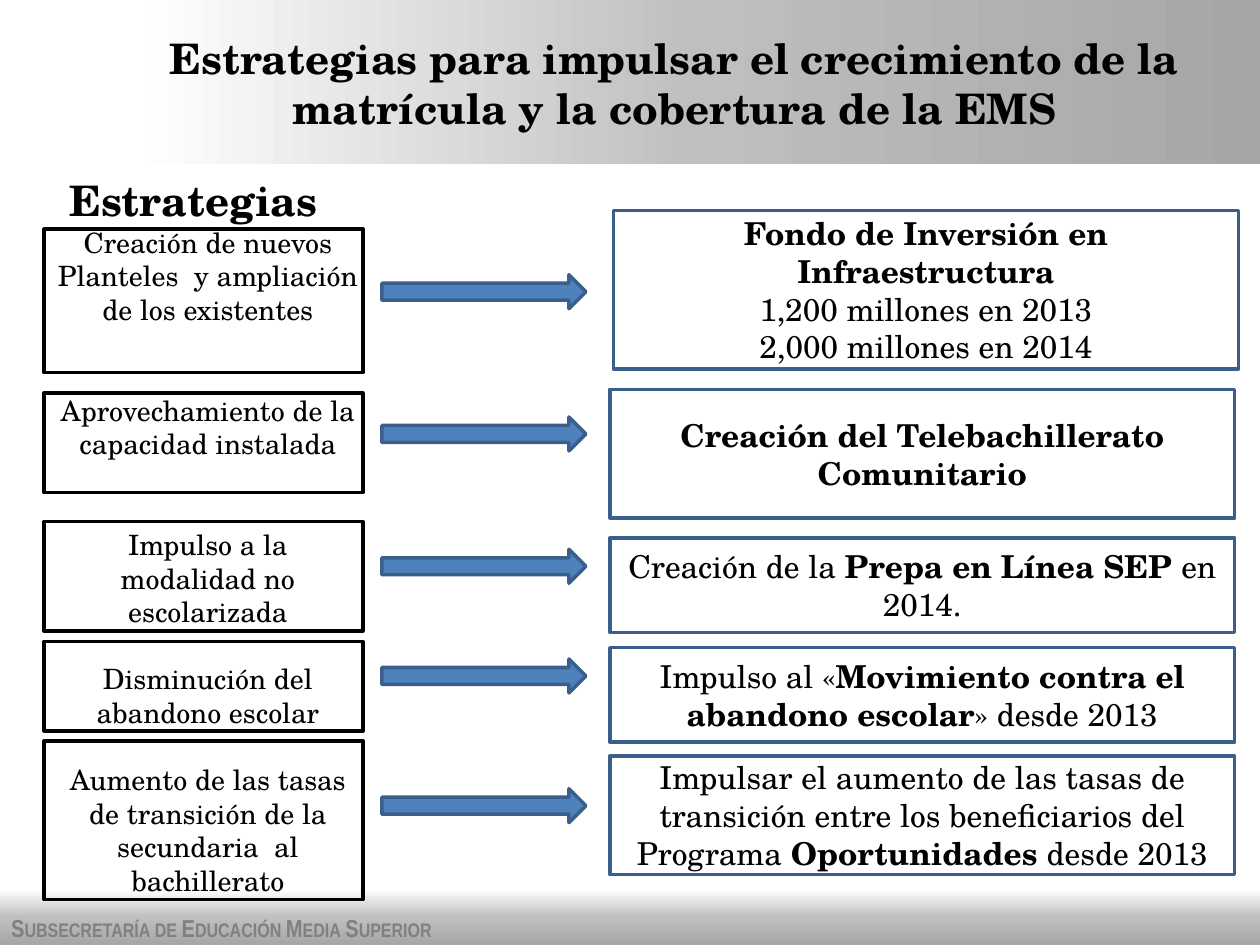
from copy import deepcopy
from typing import NamedTuple

from pptx import Presentation
from pptx.dml.color import RGBColor as Rgb
from pptx.enum.shapes import MSO_SHAPE as Geo
from pptx.enum.text import MSO_ANCHOR as Anchor, MSO_AUTO_SIZE as Fit, PP_ALIGN as Align
from pptx.oxml.ns import qn
from pptx.util import Pt

HEX = {"black": "000000", "blue": "4F81BD", "edge": "3A5F8C", "foot": "808080",
       "white": "FFFFFF", "mid": "BFBFBF", "dark": "A6A6A6"}
FACE = "TeX Gyre Schola"
LINE = 19.2  # pitch of one 16 pt line


class Run(NamedTuple):
    text: str
    bold: bool = False


class Row(NamedTuple):
    plan: str
    gap: float       # lines left free above the strategy text
    left: tuple      # top and height of the strategy frame
    arrow: float     # top of the arrow
    right: tuple     # left, top and height of the action box
    action: list     # paragraphs, each a list of runs


ROWS = [
    Row("Creación de nuevos Planteles  y ampliación de los existentes", 0,
        (131, 82), 157, (350.6, 120.2, 90.7),
        [[Run("Fondo de Inversión en Infraestructura", True)],
         [Run("1,200 millones en 2013")], [Run("2,000 millones en 2014")]]),
    Row("Aprovechamiento de la capacidad instalada", 2,
        (224.6, 56.9), 238.3, (348.5, 222.5, 73.4),
        [[Run("Creación del Telebachillerato Comunitario", True)]]),
    Row("Impulso a la modalidad no escolarizada", 2,
        (298, 62.6), 313.9, (348.5, 307.4, 54),
        [[Run("Creación de la "), Run("Prepa en Línea SEP ", True), Run("en 2014.")]]),
    Row("Disminución del abandono escolar", 1,
        (366.5, 51.1), 376.6, (348.5, 370.1, 54),
        [[Run("Impulso al «"), Run("Movimiento contra el abandono escolar", True),
          Run("» desde 2013")]]),
    Row("Aumento de las tasas de transición de la secundaria  al bachillerato", 1,
        (423.4, 90.7), 450.7, (348.5, 432, 67.7),
        [[Run("Impulsar el aumento de las tasas de transición entre los "
              "beneficiarios del Programa "),
          Run("Oportunidades ", True), Run("desde 2013")]]),
]


def tint(name: str) -> Rgb:
    return Rgb.from_string(HEX[name])


def place(shape, x: float, y: float, w: float, h: float) -> None:
    shape.left, shape.top, shape.width, shape.height = Pt(x), Pt(y), Pt(w), Pt(h)


def frame(shape):
    text = shape.text_frame
    text.word_wrap = True
    text.auto_size = Fit.NONE
    text.vertical_anchor = Anchor.MIDDLE
    return text


def write(para, runs: list, size: float, face: str = FACE,
          color: str = "black", align=Align.CENTER) -> None:
    para.alignment = align
    for item in runs:
        run = para.add_run()
        run.text = item.text
        font = run.font
        font.name, font.size, font.bold = face, Pt(size), item.bold
        font.color.rgb = tint(color)


def draw(slide, geo, x: float, y: float, w: float, h: float,
         edge: str = "", fill: str = ""):
    shape = slide.shapes.add_shape(geo, Pt(x), Pt(y), Pt(w), Pt(h))
    shape.shadow.inherit = False
    if fill:
        shape.fill.solid()
        shape.fill.fore_color.rgb = tint(fill)
    else:
        shape.fill.background()
    if edge:
        shape.line.color.rgb = tint(edge)
        shape.line.width = Pt(2)
    else:
        shape.line.fill.background()
    return shape


def band(slide, x: float, y: float, w: float, h: float, angle: float) -> None:
    """Gradient strip, sent behind everything else."""
    shape = draw(slide, Geo.RECTANGLE, x, y, w, h)
    fill = shape.fill
    fill.gradient()
    fill.gradient_angle = angle
    stops = shape.element.spPr.find(qn("a:gradFill")).find(qn("a:gsLst"))
    stops.append(deepcopy(stops[0]))
    for stop, pos, name in zip(fill.gradient_stops, (0, 0.5, 1), ("white", "mid", "dark")):
        stop.position = pos
        stop.color.rgb = tint(name)
    shape.element.getparent().insert(2, shape.element)


def label(slide, x: float, y: float, w: float, h: float):
    box = slide.shapes.add_textbox(Pt(x), Pt(y), Pt(w), Pt(h))
    return frame(box)


def plans(body) -> None:
    """The list of strategies, spaced to fall inside the frames."""
    place(body, 25.2, 116.6, 187.2, 408.2)
    text = frame(body)
    for i, row in enumerate(ROWS):
        para = text.paragraphs[0] if i == 0 else text.add_paragraph()
        props = para._p.get_or_add_pPr()
        props.set("marL", "0")
        props.set("indent", "0")
        props.append(props.makeelement(qn("a:buNone"), {}))
        para.space_before = Pt(row.gap * LINE)
        write(para, [Run(row.plan)], 16)


def action(slide, row: Row) -> None:
    x, y, h = row.right
    text = frame(draw(slide, Geo.RECTANGLE, x, y, 357.1, h, "edge"))
    for i, runs in enumerate(row.action):
        para = text.paragraphs[0] if i == 0 else text.add_paragraph()
        write(para, runs, 18)


def main() -> None:
    deck = Presentation()
    deck.slide_width, deck.slide_height = Pt(720), Pt(540)
    slide = deck.slides.add_slide(deck.slide_layouts[1])
    title, body = slide.placeholders

    # Title and footer bands
    band(slide, 76.3, 0, 643.7, 93.6, 0)
    band(slide, 0, 508.3, 720, 31.7, 270)
    foot = label(slide, -0.7, 518.4, 465, 24.5)
    foot.vertical_anchor = Anchor.TOP
    write(foot.paragraphs[0], [Run("Subsecretaría de Educación Media Superior", True)],
          14, "Arial Narrow", "foot", Align.LEFT)
    foot.paragraphs[0].runs[0].font._element.set("cap", "small")

    # Headings
    place(title, 76.3, 0, 617.8, 94.3)
    write(frame(title).paragraphs[0],
          [Run("Estrategias para impulsar el crecimiento de la matrícula "
               "y la cobertura de la EMS", True)], 24)
    head = label(slide, 8.6, 103, 203.8, 22.3)
    write(head.paragraphs[0], [Run("Estrategias", True)], 24)

    # Strategies, arrows and actions
    plans(body)
    for row in ROWS:
        top, high = row.left
        draw(slide, Geo.RECTANGLE, 25.2, top, 182.2, high, "black")
        draw(slide, Geo.RIGHT_ARROW, 218.2, row.arrow, 116.6, 19.4, "edge", "blue")
        action(slide, row)

    deck.save("out.pptx")


if __name__ == "__main__":
    main()
